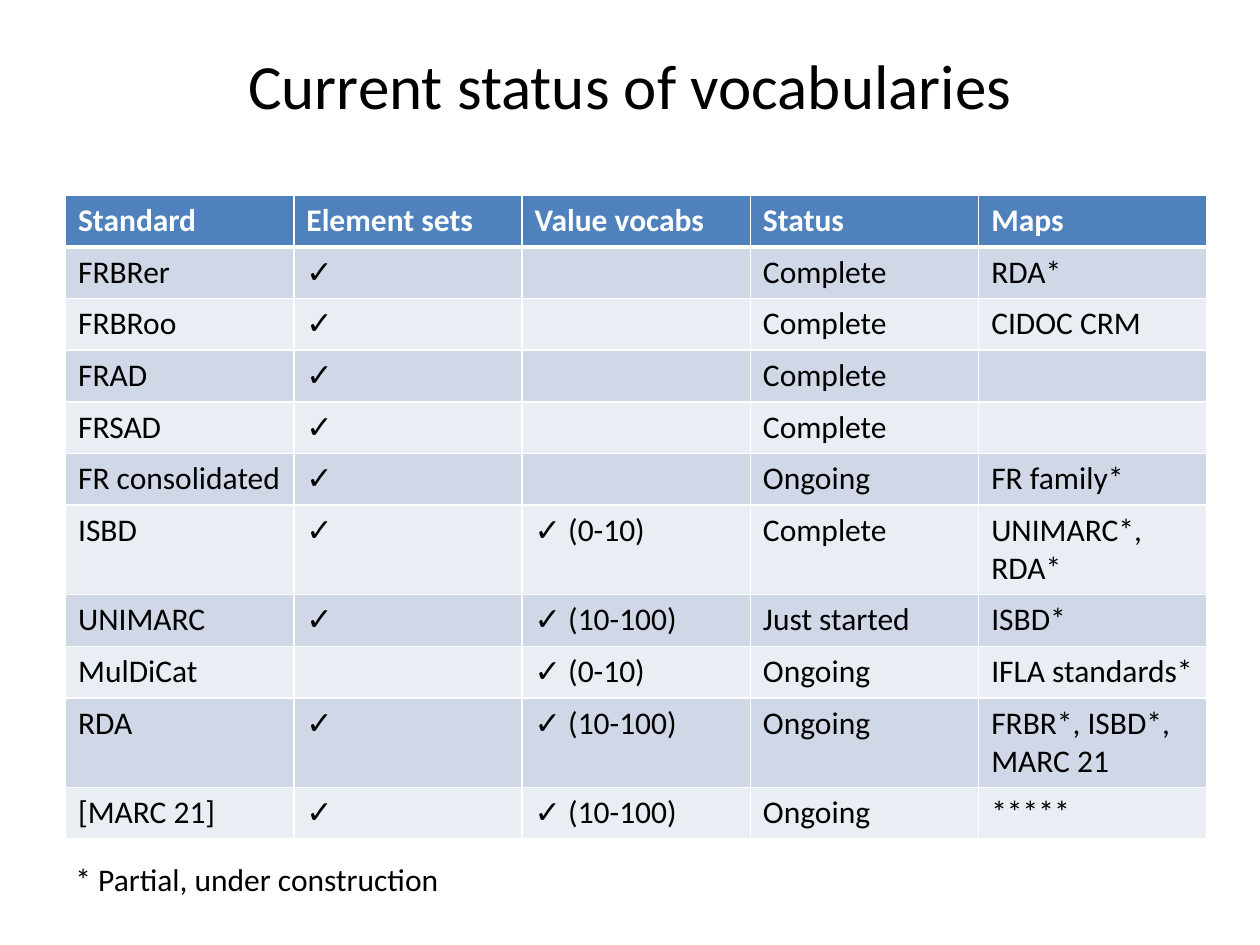
from dataclasses import dataclass

from lxml import etree
from pptx import Presentation
from pptx import util as u
from pptx.dml.color import RGBColor
from pptx.enum import text as t
from pptx.oxml.ns import qn


@dataclass(frozen=True)
class Theme:
    font: str = "Calibri"
    ink: str = "000000"
    white: str = "FFFFFF"
    head: str = "4F81BD"
    bands: tuple = ("D0D8E8", "E9EDF4")
    title: int = 36
    body: int = 18
    line: int = 1
    rule: int = 3


THEME = Theme()
TICK = "✓"
FEW = "✓ (0-10)"
MANY = "✓ (10-100)"
DONE, OPEN = "Complete", "Ongoing"

HEAD = ("Standard", "Element sets", "Value vocabs", "Status", "Maps")
ROWS = (
    ("FRBRer", TICK, "", DONE, "RDA*"),
    ("FRBRoo", TICK, "", DONE, "CIDOC CRM"),
    ("FRAD", TICK, "", DONE, ""),
    ("FRSAD", TICK, "", DONE, ""),
    ("FR consolidated", TICK, "", OPEN, "FR family*"),
    ("ISBD", TICK, FEW, DONE, "UNIMARC*, RDA*"),
    ("UNIMARC", TICK, MANY, "Just started", "ISBD*"),
    ("MulDiCat", "", FEW, OPEN, "IFLA standards*"),
    ("RDA", TICK, MANY, OPEN, "FRBR*, ISBD*, MARC 21"),
    ("[MARC 21]", TICK, MANY, OPEN, "*****"),
)
TALL = ("ISBD", "RDA")  # rows whose maps take two lines


def write(frame, words, size=THEME.body, color=THEME.ink, bold=False,
          align=t.PP_ALIGN.LEFT):
    """Put words in a text frame with the given format."""
    para = frame.paragraphs[0]
    para.alignment = align
    para.font.size = u.Pt(size)
    if words:
        run = para.add_run()
        run.text = words
        font = run.font
        font.name, font.size, font.bold = THEME.font, u.Pt(size), bold
        font.color.rgb = RGBColor.from_string(color)


def edge(cell, top, bottom):
    """Draw white borders; top and bottom widths are in points."""
    props = cell._tc.get_or_add_tcPr()
    widths = {"lnL": THEME.line, "lnR": THEME.line, "lnT": top, "lnB": bottom}
    for spot, (name, width) in enumerate(widths.items()):
        line = etree.Element(qn(f"a:{name}"), w=str(u.Pt(width)))
        fill = etree.SubElement(line, qn("a:solidFill"))
        etree.SubElement(fill, qn("a:srgbClr"), val=THEME.white)
        props.insert(spot, line)


def title(slide, box):
    frame = slide.shapes.add_textbox(*box).text_frame
    frame.word_wrap = True
    frame.margin_top = u.Inches(0.07)
    write(frame, "Current status of vocabularies", size=THEME.title,
          align=t.PP_ALIGN.CENTER)


def grid(slide, box):
    data = (HEAD, *ROWS)
    table = slide.shapes.add_table(len(data), len(HEAD), *box).table
    for r, values in enumerate(data):
        table.rows[r].height = u.Inches(0.71 if values[0] in TALL else 0.41)
        top = r == 0
        back = THEME.head if top else THEME.bands[(r - 1) % 2]
        for c, words in enumerate(values):
            cell = table.cell(r, c)
            cell.fill.solid()
            cell.fill.fore_color.rgb = RGBColor.from_string(back)
            edge(cell, THEME.rule if r == 1 else THEME.line,
                 THEME.rule if top else THEME.line)
            write(cell.text_frame, words, bold=top,
                  color=THEME.white if top else THEME.ink)


def note(slide, box):
    frame = slide.shapes.add_textbox(*box).text_frame
    frame.word_wrap = False
    frame.auto_size = t.MSO_AUTO_SIZE.SHAPE_TO_FIT_TEXT
    write(frame, "* Partial, under construction")


def area(*sides):
    return [u.Inches(side) for side in sides]


def main():
    deck = Presentation()
    deck.slide_width, deck.slide_height = area(10, 7.5)
    slide = deck.slides.add_slide(deck.slide_layouts[6])

    # Status table, heading and footnote
    grid(slide, area(0.52, 1.55, 9.06, 5.03))
    title(slide, area(0.5, 0.3, 9, 1.25))
    note(slide, area(0.5, 6.78, 3.12, 0.4))
    deck.save("out.pptx")


if __name__ == "__main__":
    main()
